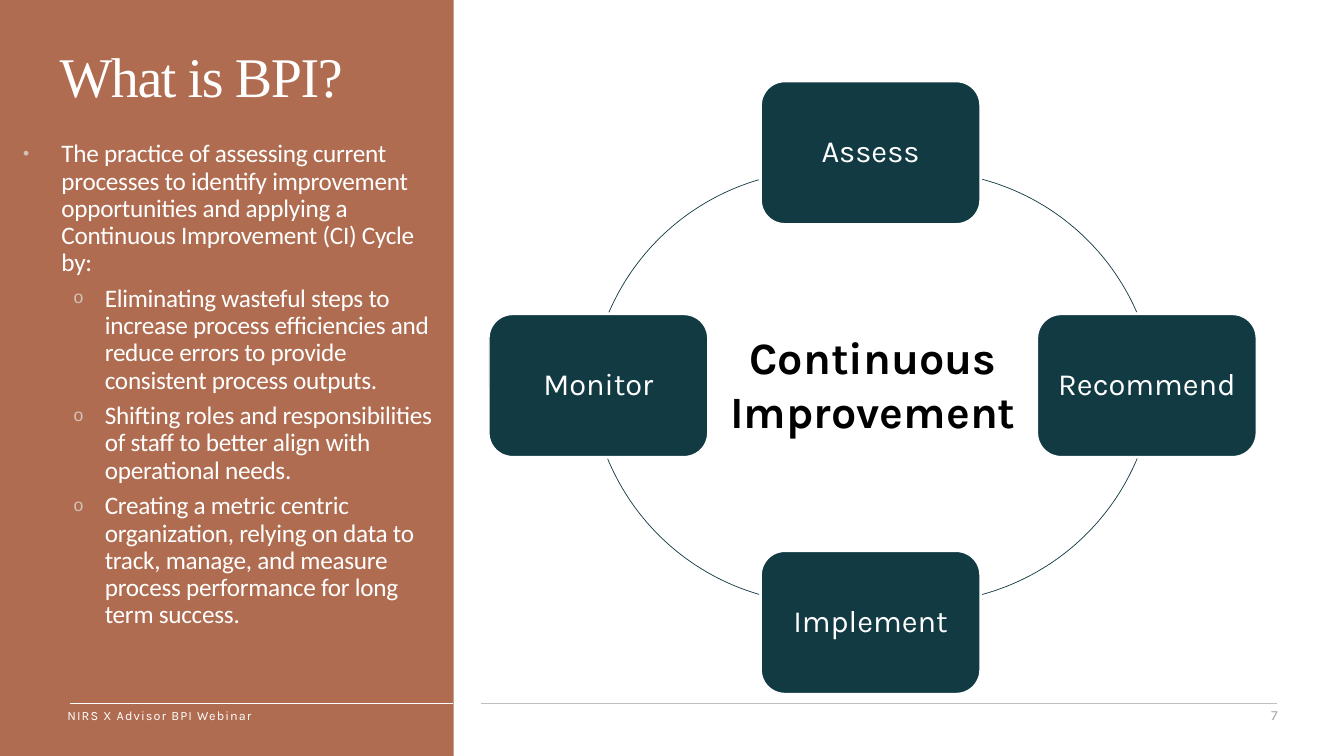
from pptx import Presentation
from pptx.dml.color import RGBColor
from pptx.enum.shapes import MSO_CONNECTOR as CONN, MSO_SHAPE as SHAPE
from pptx.enum.text import MSO_ANCHOR as ANCHOR, MSO_AUTO_SIZE as AUTO, PP_ALIGN as ALIGN
from pptx.oxml.ns import qn
from pptx.util import Inches as In, Pt
from lxml.etree import SubElement

COLORS = {"clay": "AF6C50", "teal": "123A43", "white": "FFFFFF", "black": "000000",
          "rule": "BFBFBF", "number": "A6A6A6", "bullet": "D5C2B7"}
RGB = {name: RGBColor.from_string(value) for name, value in COLORS.items()}


def style(p, font, size, color, align=ALIGN.LEFT, spacing=0, bold=False):
    p.alignment = align
    for r in p.runs:
        r.font.name, r.font.size, r.font.bold = font, Pt(size), bold
        r.font.color.rgb = RGB[color]
        if spacing:
            r.font._element.set("spc", str(int(spacing * 100)))


def add_text(s, box, text, anchor, *look):
    tf = s.shapes.add_textbox(*map(In, box)).text_frame
    tf.word_wrap = True
    tf.vertical_anchor = anchor
    tf.text = text
    style(tf.paragraphs[0], "Karla", *look)


prs = Presentation()
prs.slide_width, prs.slide_height = In(13.33), In(7.5)
s = prs.slides.add_slide(prs.slide_layouts[1])

panel = s.shapes.add_shape(SHAPE.RECTANGLE, 0, 0, In(4.5), prs.slide_height)
panel.shadow.inherit = False
panel.fill.solid()
panel.fill.fore_color.rgb = RGB["clay"]
panel.line.fill.background()
s.shapes._spTree.insert(2, panel._element)

for left, right, color in [(0.69, 4.49, "white"), (4.77, 12.67, "rule")]:
    rule = s.shapes.add_connector(CONN.STRAIGHT, In(left), In(6.98), In(right), In(6.98))
    rule.line.color.rgb = RGB[color]
    rule.line.width = Pt(0.5)
    SubElement(rule._element.spPr, qn("a:effectLst"))

title, body = s.shapes.title, s.placeholders[1]
for sp, box in [(title, (0.49, 0.49, 3.67, 0.8)), (body, (0.13, 1.35, 4.38, 5.4))]:
    sp.left, sp.top, sp.width, sp.height = map(In, box)
    sp.text_frame.word_wrap = True
    sp.text_frame.auto_size = AUTO.NONE
    sp.text_frame.vertical_anchor = ANCHOR.TOP

title.text_frame.text = "What is BPI?"
p = title.text_frame.paragraphs[0]
p.line_spacing = 0.8
style(p, "Times New Roman", 40, "white", ALIGN.LEFT, -1)

points = [
    (0, "The practice of assessing current processes to identify improvement opportunities "
        "and applying a Continuous Improvement (CI) Cycle by:"),
    (1, "Eliminating wasteful steps to increase process efficiencies and reduce errors "
        "to provide consistent process outputs."),
    (1, "Shifting roles and responsibilities of staff to better align with operational needs."),
    (1, "Creating a metric centric organization, relying on data to track, manage, and "
        "measure process performance for long term success."),
]
levels = [(0.38, -0.38, "•"), (0.81, -0.31, "o")]
tf = body.text_frame
tf.text = "\n".join(text for level, text in points)
for p, (level, text) in zip(tf.paragraphs, points):
    margin, indent, bullet = levels[level]
    p.level = level
    p.line_spacing, p.space_before, p.space_after = 0.9, Pt(0), Pt(6)
    pPr = p._p.get_or_add_pPr()
    pPr.set("marL", str(In(margin)))
    pPr.set("indent", str(In(indent)))
    SubElement(SubElement(pPr, qn("a:buClr")), qn("a:srgbClr")).set("val", COLORS["bullet"])
    SubElement(pPr, qn("a:buSzPct")).set("val", "70000")
    SubElement(pPr, qn("a:buChar")).set("char", bullet)
    style(p, "Calibri", 18, "white", ALIGN.LEFT, -0.2)

node_w, node_h, arc_size = 2.17, 1.41, 4.66
cycle = [
    ("Assess", 7.55, 0.81, 6.81, 1.7, 285, 336.4),
    ("Recommend", 10.29, 3.12, 6.8, 1.32, 22.7, 74.8),
    ("Implement", 7.55, 5.47, 5.85, 1.33, 106.2, 157.5),
    ("Monitor", 4.85, 3.12, 5.85, 1.69, 203.3, 253.7),
]
for label, x, y, arc_x, arc_y, start, end in cycle:
    node = s.shapes.add_shape(SHAPE.ROUNDED_RECTANGLE, In(x), In(y), In(node_w), In(node_h))
    node.shadow.inherit = False
    node.fill.solid()
    node.fill.fore_color.rgb = RGB["teal"]
    node.line.color.rgb = RGB["white"]
    node.line.width = Pt(1)
    tf = node.text_frame
    tf.word_wrap = True
    tf.vertical_anchor = ANCHOR.MIDDLE
    tf.text = label
    tf.paragraphs[0].line_spacing = 0.9
    style(tf.paragraphs[0], "Karla", 22, "white", ALIGN.CENTER)

    arc = s.shapes.add_shape(SHAPE.ARC, In(arc_x), In(arc_y), In(arc_size), In(arc_size))
    arc.shadow.inherit = False
    arc.fill.background()
    arc.line.color.rgb = RGB["teal"]
    arc.line.width = Pt(0.5)
    for i, degrees in enumerate((start, end)):
        arc.adjustments[i] = degrees * 0.6

add_text(s, (7, 3.22, 3.32, 1.18), "Continuous Improvement", ANCHOR.TOP,
         32, "black", ALIGN.CENTER, 0, True)
add_text(s, (0.57, 6.97, 3.8, 0.25), "NIRS X Advisor BPI Webinar", ANCHOR.MIDDLE,
         9, "white", ALIGN.LEFT, 0.8)
add_text(s, (9.77, 6.97, 3, 0.25), "7", ANCHOR.MIDDLE, 10, "number", ALIGN.RIGHT)

prs.save("out.pptx")
